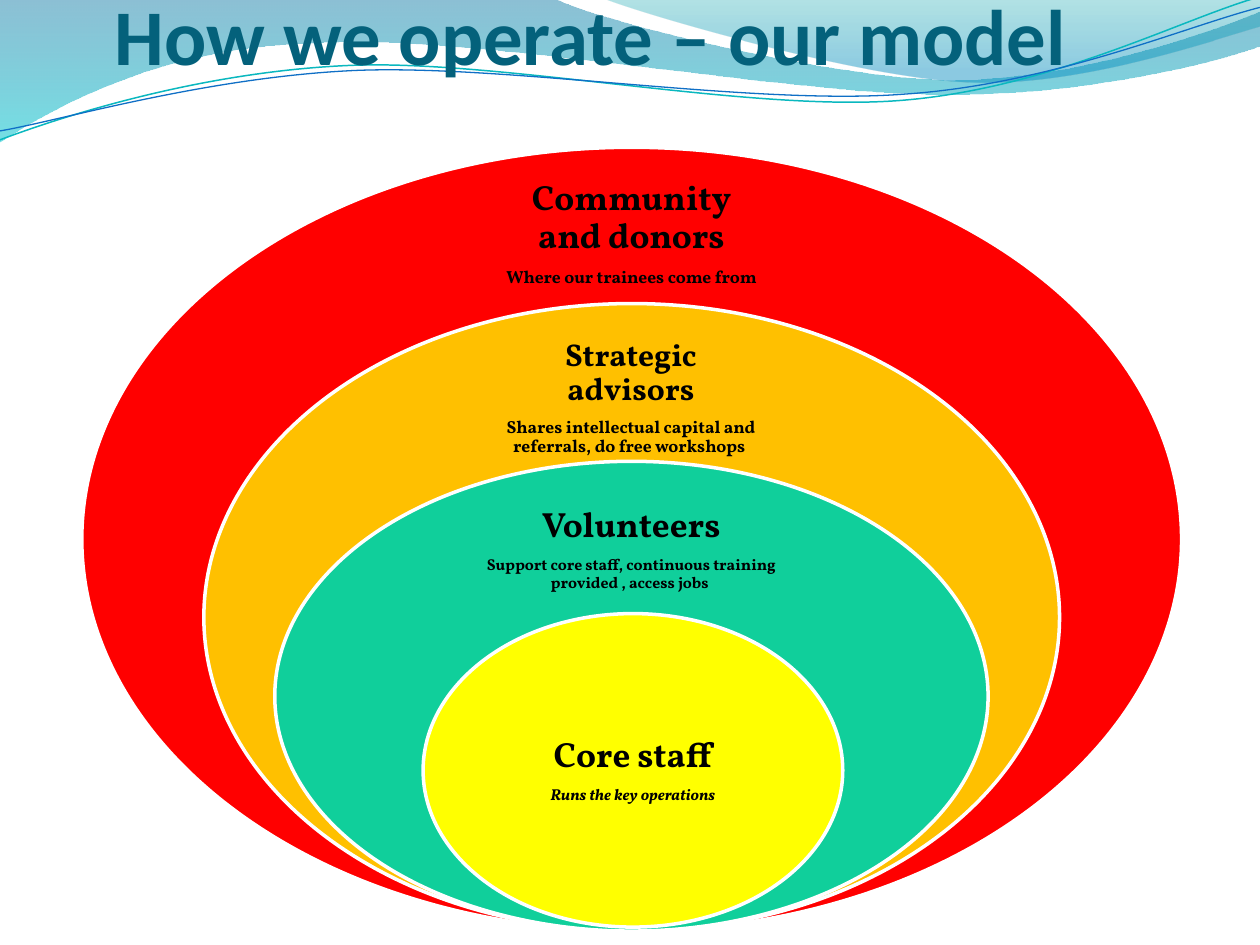
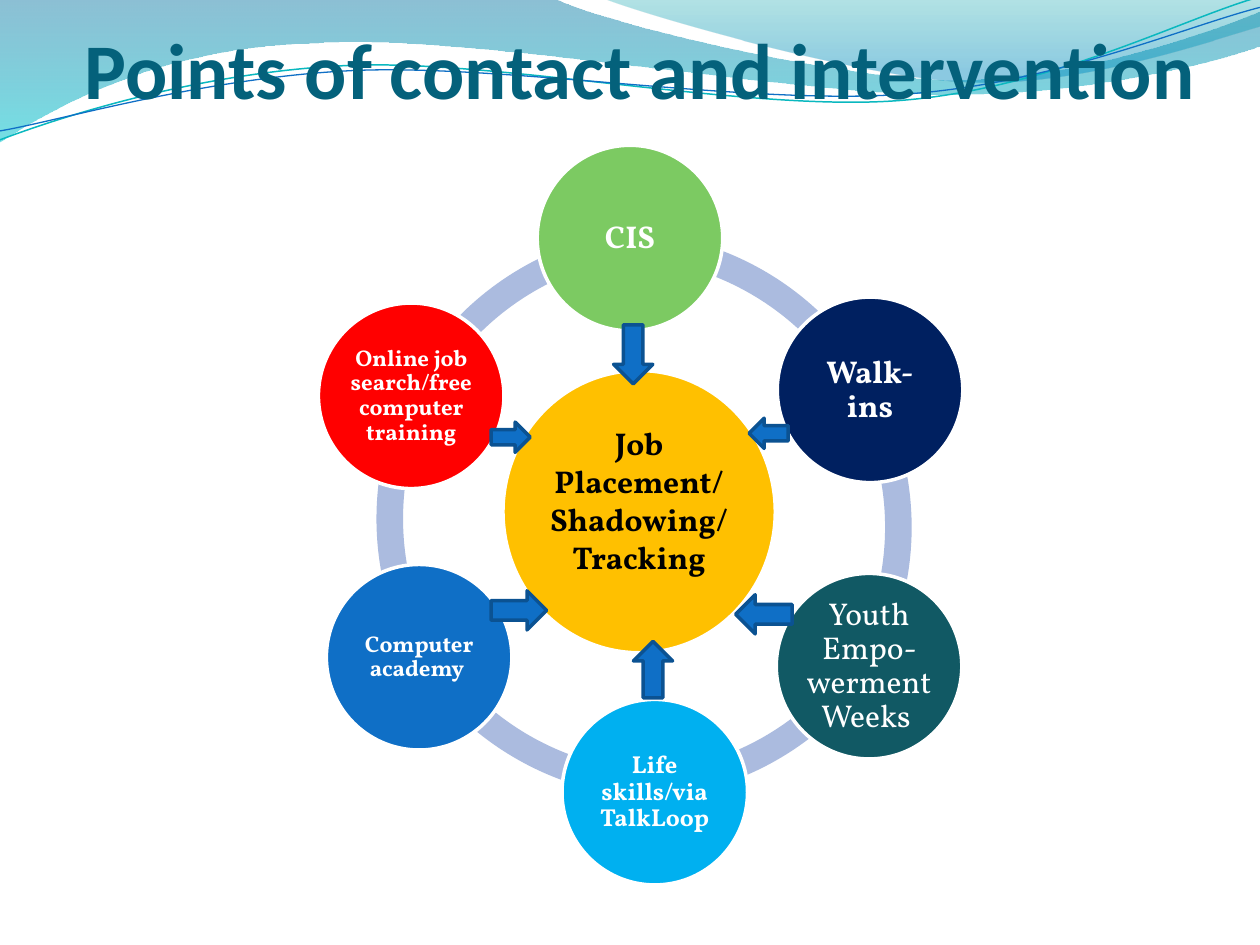
from typing import NamedTuple, Optional

from lxml.etree import SubElement
from pptx import Presentation
from pptx.dml.color import RGBColor
from pptx.enum.shapes import MSO_SHAPE as Preset, PP_PLACEHOLDER as Holder
from pptx.enum.text import MSO_ANCHOR as Anchor, MSO_AUTO_SIZE as AutoSize, PP_ALIGN as Align
from pptx.oxml.ns import qn
from pptx.util import Cm, Pt

WHITE = RGBColor(0xFF, 0xFF, 0xFF)
BLACK = RGBColor(0x00, 0x00, 0x00)
TITLE_TEAL = RGBColor(0x04, 0x61, 0x7B)
RED = RGBColor(0xFF, 0x00, 0x00)
AMBER = RGBColor(0xFF, 0xC0, 0x00)
MINT = RGBColor(0x10, 0xCF, 0x9B)
YELLOW = RGBColor(0xFF, 0xFF, 0x00)
GREEN = RGBColor(0x7C, 0xCA, 0x62)
NAVY = RGBColor(0x00, 0x20, 0x60)
PINE = RGBColor(0x11, 0x59, 0x64)
SKY = RGBColor(0x00, 0xB0, 0xF0)
BLUE = RGBColor(0x0F, 0x6F, 0xC6)
ARROW_EDGE = RGBColor(0x0B, 0x52, 0x92)
RING_BLUE = RGBColor(0xAB, 0xBB, 0xDF)
TURQUOISE = RGBColor(0x0A, 0xB8, 0xBF)
WAVE_DEEP = RGBColor(0x00, 0x74, 0xA1)
WAVE_CYAN = RGBColor(0x00, 0xC6, 0xCF)
WAVE_TEAL = RGBColor(0x00, 0xA1, 0xA9)
WAVE_BLUE = RGBColor(0x00, 0x8B, 0xBF)

TITLE_FONT = "Calibri"
BODY_FONT = "Vollkorn"
CIRCLE_SIZE = 3.74
RING_SIZE = 11.92
RING_THICKNESS = 0.045


class Box(NamedTuple):
    """Left, top, width and height in centimetres."""
    left: float
    top: float
    width: float
    height: float

    def lengths(self) -> list:
        return [Cm(value) for value in self]


class Stop(NamedTuple):
    color: RGBColor
    position: float
    opacity: int


class Wave(NamedTuple):
    """A start point, then segments of one point (straight) or three (Bézier)."""
    start: tuple
    segments: list
    stops: tuple = ()
    line: Optional[RGBColor] = None
    weight: float = 0


class Layer(NamedTuple):
    ellipse: Box
    color: RGBColor
    label: Box
    heading: str
    detail: str
    heading_size: int = 20
    detail_size: int = 9
    italic: bool = False


class Contact(NamedTuple):
    left: float
    top: float
    color: RGBColor
    text: str
    size: int = 18
    bold: bool = True


class RingArc(NamedTuple):
    left: float
    top: float
    start: float
    end: float


class Arrow(NamedTuple):
    preset: Preset
    box: Box


WAVES = [
    Wave((0, 0), [
        [(11.18, -0.03)],
        [(12.09, 0.43), (16.87, 1.6), (19.25, 1.6)],
        [(21.67, 1.6), (24.33, 0.66), (25.4, 0.23)],
        [(25.43, 0.91)],
        [(24.97, 1.12), (22.1, 1.93), (18.95, 1.9)],
        [(15.8, 1.9), (9.7, 0.71), (6.53, 0.86)],
        [(3.28, 0.91), (1.17, 2.11), (-0.03, 2.87)],
    ], stops=(Stop(WAVE_DEEP, 0, 45), Stop(WAVE_CYAN, 1, 55))),
    Wave((12.17, -0.03), [
        [(12.93, 0.28), (17.32, 1.57), (19.53, 1.65)],
        [(21.74, 1.75), (24.41, 0.81), (25.4, 0.53)],
        [(25.4, 0)],
    ], stops=(Stop(WAVE_TEAL, 0, 30), Stop(WAVE_BLUE, 0.8, 45))),
    Wave((0, 2.82), [
        [(1.22, 2.36), (4.01, 1.45), (7.04, 1.32)],
        [(10.03, 1.19), (15.06, 2.26), (18.11, 2.03)],
        [(21.16, 1.8), (23.83, 0.38), (25.35, -0.05)],
    ], line=TURQUOISE, weight=0.85),
    Wave((0, 2.64), [
        [(1.19, 2.44), (4.17, 1.55), (7.19, 1.42)],
        [(10.24, 1.3), (15.16, 2.13), (18.21, 1.9)],
        [(21.23, 1.7), (23.9, 0.53), (25.4, 0.15)],
    ], line=BLUE, weight=0.75),
]

LAYERS = [
    Layer(Box(1.65, 2.97, 22.17, 15.8), RED, Box(9.63, 3.53, 6.2, 2.36),
          "Community and donors", "Where our trainees come from", detail_size=10),
    Layer(Box(4.11, 6.12, 17.25, 12.65), AMBER, Box(9.71, 6.88, 6.02, 2.29),
          "Strategic advisors",
          "Shares intellectual capital and referrals, do free workshops ",
          heading_size=18, detail_size=10),
    Layer(Box(5.54, 9.3, 14.38, 9.47), MINT, Box(9.37, 10.01, 6.71, 2.13),
          "Volunteers", "Support core staff, continuous training provided , access jobs "),
    Layer(Box(8.53, 12.37, 8.46, 6.32), YELLOW, Box(9.77, 13.96, 5.97, 3.15),
          "Core staff", "Runs the key operations", italic=True),
]

CONTACTS = [
    Contact(10.83, 2.93, GREEN, "CIS"),
    Contact(15.67, 5.99, NAVY, "Walk-ins"),
    Contact(15.65, 11.56, PINE, "Youth Empo-werment Weeks ", bold=False),
    Contact(11.33, 14.1, SKY, "Life skills/via TalkLoop", 14),
    Contact(6.58, 11.38, BLUE, "Computer academy ", 13),
    Contact(6.42, 6.11, RED, "Online job search/free computer training", 13),
]

RING = [
    RingArc(7.54, 4.6, 206.39, 261.98),
    RingArc(7.59, 4.5, 151.32, 205.19),
    RingArc(7.42, 4.17, 91.75, 147.69),
    RingArc(6.74, 4.19, 34.23, 85.03),
    RingArc(6.46, 4.67, 331.72, 28.87),
    RingArc(6.46, 4.66, 272.88, 331.79),
]

ARROWS = [
    Arrow(Preset.DOWN_ARROW, Box(12.37, 6.55, 0.79, 1.19)),
    Arrow(Preset.RIGHT_ARROW, Box(9.9, 8.51, 0.79, 0.61)),
    Arrow(Preset.LEFT_ARROW, Box(15.1, 8.43, 0.79, 0.61)),
    Arrow(Preset.UP_ARROW, Box(12.77, 12.93, 0.79, 1.14)),
    Arrow(Preset.RIGHT_ARROW, Box(9.9, 11.91, 1.12, 0.79)),
    Arrow(Preset.LEFT_ARROW, Box(14.83, 11.99, 1.14, 0.79)),
]


def prepare_frame(frame, side=0.0, top=0.0, bottom=0.0, anchor=Anchor.MIDDLE) -> None:
    frame.word_wrap = True
    frame.auto_size = AutoSize.NONE
    frame.vertical_anchor = anchor
    frame.margin_left = frame.margin_right = Cm(side)
    frame.margin_top, frame.margin_bottom = Cm(top), Cm(bottom)


def write(paragraph, text: str, size: float, color=BLACK, font=BODY_FONT,
          bold=True, italic=False, spacing=0.9, after=0.0) -> None:
    paragraph.alignment = Align.CENTER
    paragraph.line_spacing = spacing
    paragraph.space_before, paragraph.space_after = Pt(0), Pt(after)
    run = paragraph.add_run()
    run.text = text
    run.font.name, run.font.size = font, Pt(size)
    run.font.bold, run.font.italic = bold, italic
    run.font.color.rgb = color


def add_filled(slide, preset: Preset, box: Box, fill: RGBColor,
               line: Optional[RGBColor] = WHITE):
    shape = slide.shapes.add_shape(preset, *box.lengths())
    shape.shadow.inherit = False
    shape.fill.solid()
    shape.fill.fore_color.rgb = fill
    if line is None:
        shape.line.fill.background()
    else:
        shape.line.color.rgb = line
        shape.line.width = Pt(2)
    return shape


def bend(shape, segments: list) -> None:
    """Join the straight lines of each three-point segment into one Bézier curve."""
    lines = iter(list(shape.element.iter(qn("a:lnTo"))))
    for segment in segments:
        group = [next(lines) for _ in segment]
        if len(group) == 3:
            outline = group[0].getparent()
            curve = SubElement(outline, qn("a:cubicBezTo"))
            outline.replace(group[0], curve)
            for line in group:
                curve.append(line[0])
            for line in group[1:]:
                outline.remove(line)


def add_wave(slide, wave: Wave):
    builder = slide.shapes.build_freeform(*map(Cm, wave.start))
    points = [(Cm(x), Cm(y)) for segment in wave.segments for x, y in segment]
    builder.add_line_segments(points, close=bool(wave.stops))
    shape = builder.convert_to_shape()
    bend(shape, wave.segments)
    shape.shadow.inherit = False
    if not wave.stops:
        shape.fill.background()
        shape.line.color.rgb = wave.line
        shape.line.width = Pt(wave.weight)
        return shape
    shape.line.fill.background()
    shape.fill.gradient()
    shape.fill.gradient_angle = 270
    for target, stop in zip(shape.fill.gradient_stops, wave.stops):
        target.color.rgb, target.position = stop.color, stop.position
    for color, stop in zip(list(shape.element.iter(qn("a:srgbClr"))), wave.stops):
        SubElement(color, qn("a:alpha"), val=str(stop.opacity * 1000))
    return shape


def move_waves_to_layout(slide) -> None:
    """Draw the waves once and let every slide of the layout show them."""
    layout = slide.slide_layout
    for holder in list(layout.placeholders):
        if holder.placeholder_format.type != Holder.TITLE:
            holder.element.getparent().remove(holder.element)
    waves = [add_wave(slide, wave) for wave in WAVES]
    for wave in waves:
        layout.shapes.element.append(wave.element)


def add_titled_slide(deck, title_text: str, box: Box):
    slide = deck.slides.add_slide(deck.slide_layouts[5])
    title = slide.shapes.title
    title.left, title.top, title.width, title.height = box.lengths()
    prepare_frame(title.text_frame, top=0.13, anchor=Anchor.BOTTOM)
    write(title.text_frame.paragraphs[0], title_text, 45, color=TITLE_TEAL,
          font=TITLE_FONT, spacing=1.0)
    return slide


def add_layer(slide, layer: Layer) -> None:
    add_filled(slide, Preset.OVAL, layer.ellipse, layer.color)
    frame = slide.shapes.add_textbox(*layer.label.lengths()).text_frame
    prepare_frame(frame, side=0.41)
    write(frame.paragraphs[0], layer.heading, layer.heading_size,
          after=0.35 * layer.heading_size)
    write(frame.add_paragraph(), layer.detail, layer.detail_size, italic=layer.italic)


def add_ring_arc(slide, arc: RingArc) -> None:
    shape = add_filled(slide, Preset.BLOCK_ARC,
                       Box(arc.left, arc.top, RING_SIZE, RING_SIZE), RING_BLUE, line=None)
    # Angles are stored in 60000ths of a degree, adjustments in 100000ths.
    shape.adjustments[0] = arc.start * 0.6
    shape.adjustments[1] = arc.end * 0.6
    shape.adjustments[2] = RING_THICKNESS


def add_hub(slide) -> None:
    hub = add_filled(slide, Preset.OVAL, Box(10.14, 7.47, 5.49, 5.69), AMBER)
    frame = hub.text_frame
    prepare_frame(frame, side=0.08, bottom=0.48)
    for index, line in enumerate(("Job Placement/", "Shadowing/", "Tracking")):
        paragraph = frame.add_paragraph() if index else frame.paragraphs[0]
        write(paragraph, line, 18, spacing=1.0)


def add_contact(slide, contact: Contact) -> None:
    box = Box(contact.left, contact.top, CIRCLE_SIZE, CIRCLE_SIZE)
    frame = add_filled(slide, Preset.OVAL, box, contact.color).text_frame
    prepare_frame(frame, side=0.05)
    write(frame.paragraphs[0], contact.text, contact.size, color=WHITE, bold=contact.bold)


def main() -> None:
    deck = Presentation()
    deck.slide_width, deck.slide_height = Cm(25.4), Cm(19.05)

    model = add_titled_slide(deck, "How we operate – our model", Box(1.3, 0.31, 21.21, 1.32))
    move_waves_to_layout(model)
    for layer in LAYERS:
        add_layer(model, layer)

    contact_points = add_titled_slide(deck, "Points of contact and intervention",
                                      Box(1.6, 0.53, 22.6, 1.8))
    for arc in RING:
        add_ring_arc(contact_points, arc)
    add_hub(contact_points)
    for contact in CONTACTS:
        add_contact(contact_points, contact)
    for arrow in ARROWS:
        add_filled(contact_points, arrow.preset, arrow.box, BLUE, line=ARROW_EDGE)

    deck.save("out.pptx")


if __name__ == "__main__":
    main()
